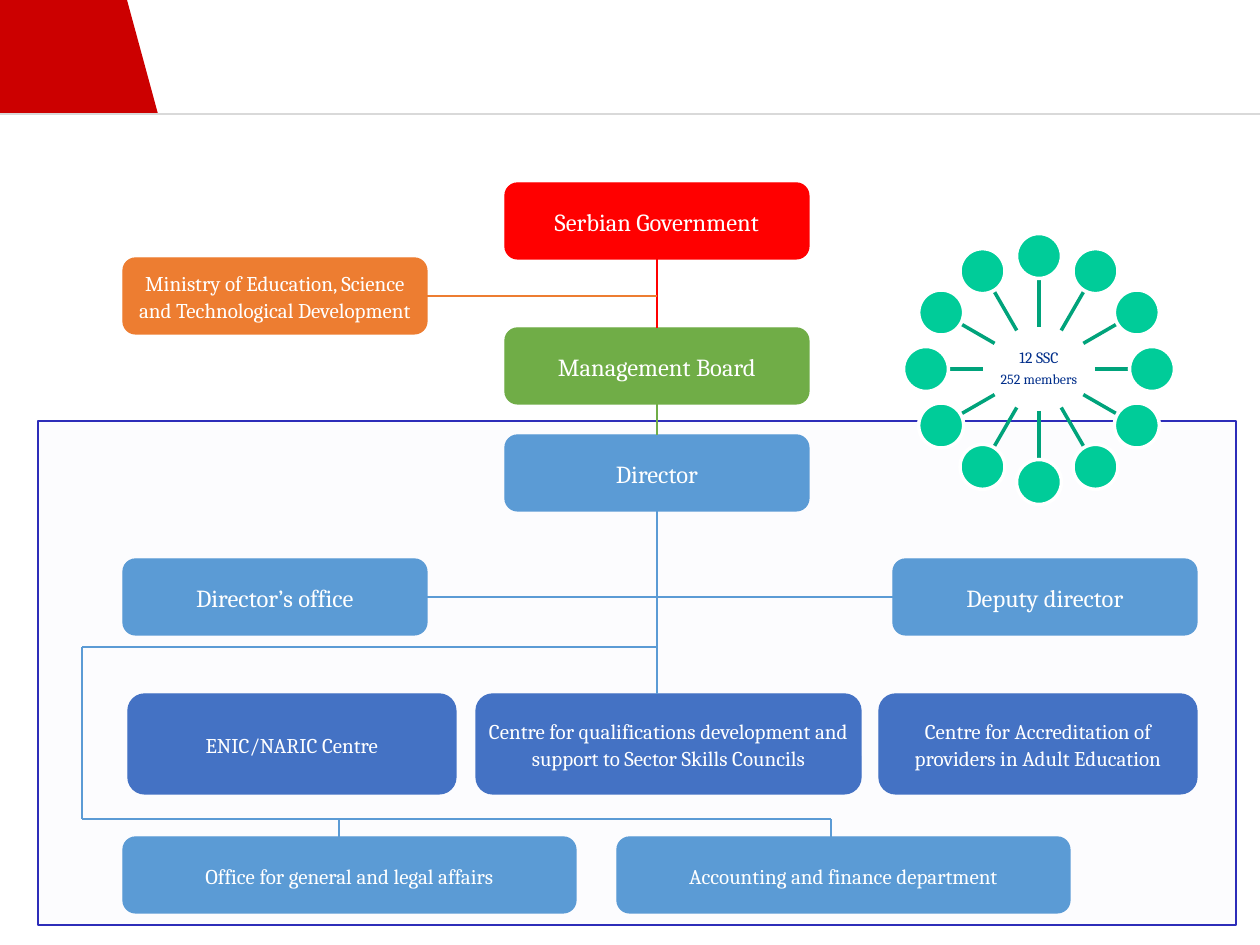
from math import cos, hypot, radians, sin

from lxml import etree
from pptx import Presentation
from pptx.dml.color import RGBColor
from pptx.enum.shapes import MSO_CONNECTOR, MSO_SHAPE
from pptx.enum.text import MSO_ANCHOR, PP_ALIGN
from pptx.oxml.ns import qn
from pptx.util import Pt

RECT, ROUND, OVAL = MSO_SHAPE.RECTANGLE, MSO_SHAPE.ROUNDED_RECTANGLE, MSO_SHAPE.OVAL
STRAIGHT = MSO_CONNECTOR.STRAIGHT
MIDDLE, CENTER = MSO_ANCHOR.MIDDLE, PP_ALIGN.CENTER
TOP, LEFT, BOTTOM, RIGHT = range(4)

WHITE = RGBColor(0xFF, 0xFF, 0xFF)
CRIMSON = RGBColor(0xCC, 0x00, 0x00)
GREY = RGBColor(0xD9, 0xD9, 0xD9)
LILAC = RGBColor(0xD2, 0xD2, 0xF4)
NAVY = RGBColor(0x2D, 0x2D, 0xB9)
INK = RGBColor(0x00, 0x2E, 0x8A)
RED = RGBColor(0xFF, 0x00, 0x00)
GREEN = RGBColor(0x70, 0xAD, 0x47)
ORANGE = RGBColor(0xED, 0x7D, 0x31)
SKY = RGBColor(0x5B, 0x9B, 0xD5)
BLUE = RGBColor(0x44, 0x72, 0xC4)
MINT = RGBColor(0x00, 0xCC, 0x99)
TEAL = RGBColor(0x00, 0xA3, 0x7B)


def emu(px):
    return round(px * 914400 / 126)


class Chart:
    font = "Cambria"

    def __init__(self, slide):
        self.shapes = slide.shapes

    def paint(self, shape, fill, edge, width):
        shape.shadow.inherit = False
        shape.fill.solid()
        shape.fill.fore_color.rgb = fill
        shape.line.color.rgb = edge
        shape.line.width = Pt(width)
        return shape

    def shape(self, kind, x, y, w, h, fill, edge, width):
        item = self.shapes.add_shape(kind, emu(x), emu(y), emu(w), emu(h))
        return self.paint(item, fill, edge, width)

    def outline(self, points, fill):
        pen = self.shapes.build_freeform(*map(emu, points[0]))
        pen.add_line_segments([(emu(x), emu(y)) for x, y in points[1:]])
        shape = self.paint(pen.convert_to_shape(), fill, fill, 0.75)
        shape.line.fill.background()

    def label(self, shape, lines, color, spacing, after):
        """Fill the shape with (text, size) lines."""
        frame = shape.text_frame
        frame.word_wrap = True
        frame.vertical_anchor = MIDDLE
        frame.margin_left = frame.margin_right = 0
        frame.margin_top = frame.margin_bottom = 0
        for i, (text, size) in enumerate(lines):
            para = frame.add_paragraph() if i else frame.paragraphs[0]
            para.text = text
            para.alignment = CENTER
            para.line_spacing = spacing
            para.space_after = Pt(after)
            para.font.name = self.font
            para.font.size = Pt(size)
            para.font.color.rgb = color

    def box(self, text, x, y, color, w=304, h=76, size=14):
        shape = self.shape(ROUND, x, y, w, h, color, color, 0.75)
        self.label(shape, [(text, size)], WHITE, 1.07, 8)
        return shape

    def line(self, x1, y1, x2, y2, color, width=1.5):
        line = self.shapes.add_connector(STRAIGHT, emu(x1), emu(y1), emu(x2), emu(y2))
        line.line.color.rgb = color
        line.line.width = Pt(width)
        etree.SubElement(line._element.spPr, qn("a:effectLst"))
        return line

    def join(self, a, side, b, other, color):
        line = self.line(0, 0, 1, 1, color)
        line.begin_connect(a, side)
        line.end_connect(b, other)

    def panel(self, x, y, w, h):
        shape = self.shape(RECT, x, y, w, h, LILAC, NAVY, 1.5)
        tint = shape._element.spPr.find(qn("a:solidFill"))[0]
        etree.SubElement(tint, qn("a:alpha")).set("val", "6000")

    def wheel(self, x, y, lines, count=12):
        """A hub with text and a ring of discs on spokes."""
        a, b, reach, orbit, disc = 56, 42, 90, 113, 45
        hub = self.shape(RECT, x - a, y - b, 2 * a, 2 * b, WHITE, WHITE, 2)
        self.label(hub, lines, INK, 0.9, 3)
        for i in range(count):
            turn = radians(360 * i / count - 90)
            dx, dy = cos(turn), sin(turn)
            start = a * b / hypot(b * dx, a * dy)
            self.line(x + start * dx, y + start * dy,
                      x + reach * dx, y + reach * dy, TEAL, 2)
            self.shape(OVAL, x + orbit * dx - disc / 2, y + orbit * dy - disc / 2,
                       disc, disc, MINT, WHITE, 2)


def main():
    deck = Presentation()
    deck.slide_width, deck.slide_height = emu(1260), emu(945)
    chart = Chart(deck.slides.add_slide(deck.slide_layouts[6]))

    chart.outline([(0, 0), (127, 0), (158, 114), (0, 114)], CRIMSON)
    chart.line(0, 114, 1260, 114, GREY, 0.75)
    chart.panel(38, 421, 1198, 504)

    state = chart.box("Serbian Government", 505, 183, RED)
    board = chart.box("Management Board", 505, 328, GREEN)
    head = chart.box("Director", 505, 435, SKY)
    office = chart.box("Director’s office", 123, 559, SKY)
    deputy = chart.box("Deputy director", 893, 559, SKY)
    ministry = chart.box("Ministry of Education, Science and Technological Development",
                         123, 258, ORANGE, size=12)
    for text, x, w in [
        ("ENIC/NARIC Centre", 128, 328),
        ("Centre for qualifications development and support to Sector Skills Councils",
         476, 385),
        ("Centre for Accreditation of providers in Adult Education", 879, 318),
    ]:
        chart.box(text, x, 694, BLUE, w, 100, 12)
    for text, x in [("Office for general and legal affairs", 123),
                    ("Accounting and finance department", 617)]:
        chart.box(text, x, 837, SKY, 453, 76, 12)

    chart.join(state, BOTTOM, board, TOP, RED)
    chart.line(427, 296, 657, 296, ORANGE).begin_connect(ministry, RIGHT)
    chart.join(board, BOTTOM, head, TOP, GREEN)
    chart.line(657, 511, 657, 694, SKY).begin_connect(head, BOTTOM)
    chart.join(office, RIGHT, deputy, LEFT, SKY)
    for ends in [(657, 647, 82, 647), (82, 647, 82, 819), (82, 819, 831, 819),
                 (339, 819, 339, 837), (831, 819, 831, 837)]:
        chart.line(*ends, SKY, 0.75)

    chart.wheel(1039, 369, [("12 SSC", 9), ("252 members", 8)])
    deck.save("out.pptx")


if __name__ == "__main__":
    main()
